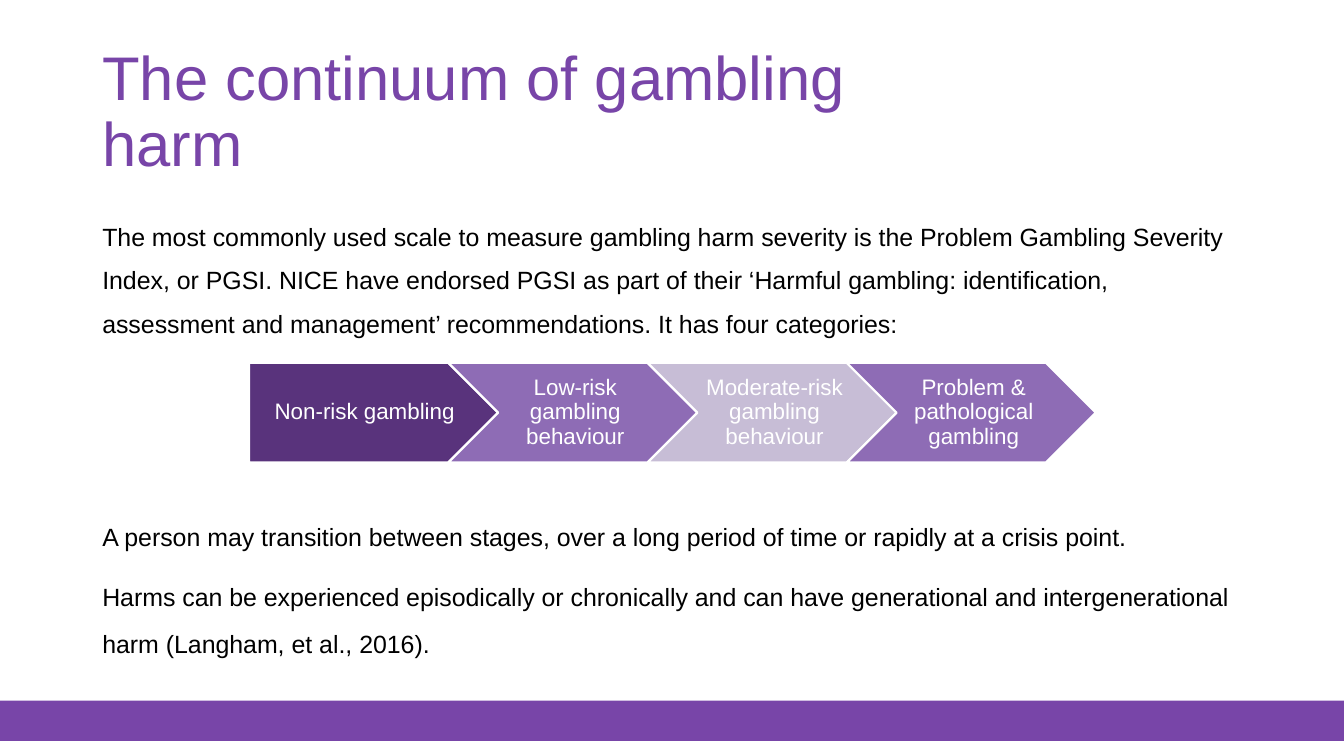
from pptx import Presentation
from pptx.dml.color import RGBColor
from pptx.enum.shapes import MSO_SHAPE as Shape
from pptx.enum.text import MSO_ANCHOR as Anchor, PP_ALIGN as Align
from pptx.util import Pt

COLOURS = {
    "purple": "7845A8",
    "dark": "59337C",
    "mid": "8E6CB5",
    "pale": "C7BDD6",
    "white": "FFFFFF",
    "black": "000000",
}


def colour(name):
    return RGBColor.from_string(COLOURS[name])


def write(frame, lines, size, ink, spacing, gap=0):
    """Fill a text frame with one paragraph per line."""
    frame.word_wrap = True
    for index, line in enumerate(lines):
        para = frame.add_paragraph() if index else frame.paragraphs[0]
        para.text = line
        para.line_spacing = spacing
        if index:
            para.space_before = Pt(gap)
        para.font.name = "Arial"
        para.font.size = Pt(size)
        para.font.color.rgb = colour(ink)


deck = Presentation()
deck.slide_width, deck.slide_height = Pt(960), Pt(540)
page = deck.slides.add_slide(deck.slide_layouts[6])

# Footer band
band = page.shapes.add_shape(Shape.RECTANGLE, Pt(0), Pt(500.4), Pt(960), Pt(28.8))
band.shadow.inherit = False
band.fill.solid()
band.fill.fore_color.rgb = colour("purple")
band.line.fill.background()

# Title
title = page.shapes.add_textbox(Pt(66), Pt(28.8), Pt(643), Pt(104.4))
title.text_frame.vertical_anchor = Anchor.MIDDLE
write(title.text_frame, ["The continuum of gambling harm"], 44, "purple", 0.9)

# Body text above and below the arrows
BODY = [
    (145, 100, 1.45, [
        "The most commonly used scale to measure gambling harm severity is the "
        "Problem Gambling Severity Index, or PGSI. NICE have endorsed PGSI as part "
        "of their ‘Harmful gambling: identification, assessment and management’ "
        "recommendations. It has four categories:",
    ]),
    (356.5, 120, 1.57, [
        "A person may transition between stages, over a long period of time or "
        "rapidly at a crisis point.",
        "Harms can be experienced episodically or chronically and can have "
        "generational and intergenerational harm (Langham, et al., 2016).",
    ]),
]
for top, height, spacing, lines in BODY:
    box = page.shapes.add_textbox(Pt(66), Pt(top), Pt(828), Pt(height))
    write(box.text_frame, lines, 17.8, "black", spacing, gap=10)

# Four risk categories
STAGES = [
    ("Non-risk gambling", "dark"),
    ("Low-risk gambling behaviour", "mid"),
    ("Moderate-risk gambling behaviour", "pale"),
    ("Problem & pathological gambling", "mid"),
]
for index, (label, fill) in enumerate(STAGES):
    outline = Shape.CHEVRON if index else Shape.PENTAGON
    arrow = page.shapes.add_shape(
        outline, Pt(178 + 142.3 * index), Pt(259.2), Pt(177.8), Pt(71.2))
    arrow.shadow.inherit = False
    arrow.fill.solid()
    arrow.fill.fore_color.rgb = colour(fill)
    arrow.line.color.rgb = colour("white")
    arrow.line.width = Pt(1.5)
    frame = arrow.text_frame
    frame.margin_left, frame.margin_right = Pt(5 if index else 6.5), Pt(1.5)
    frame.vertical_anchor = Anchor.MIDDLE
    write(frame, [label], 16, "white", 0.9)
    frame.paragraphs[0].alignment = Align.CENTER

deck.save("out.pptx")
